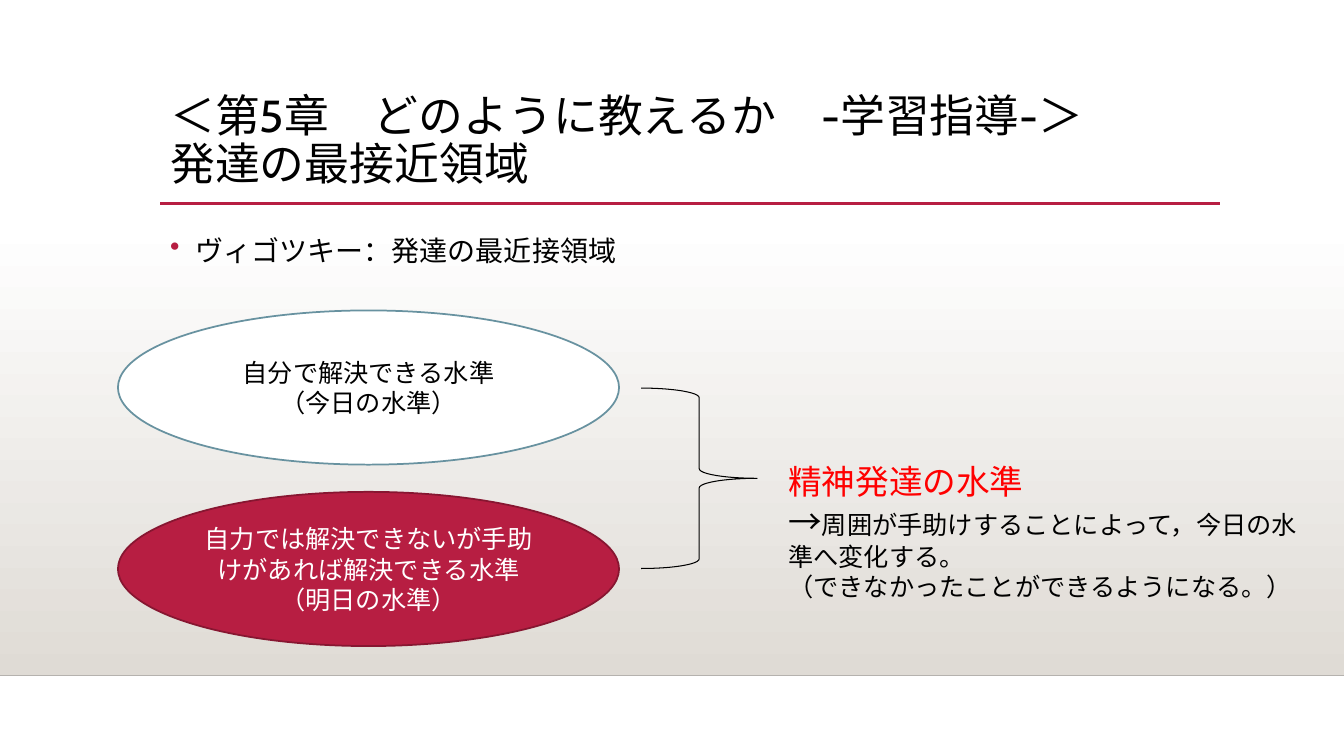
from lxml import etree
from pptx import Presentation
from pptx.dml.color import RGBColor
from pptx.enum import shapes, text
from pptx.oxml import ns
from pptx.util import Inches, Pt

FONT = "Cabin"
BLACK = RGBColor(0x00, 0x00, 0x00)
WHITE = RGBColor(0xFF, 0xFF, 0xFF)
RED = RGBColor(0xFF, 0x00, 0x00)
CRIMSON = RGBColor(0xB7, 0x1E, 0x42)
DARK_CRIMSON = RGBColor(0x87, 0x16, 0x31)
TEAL = RGBColor(0x68, 0x92, 0xA0)
SAND = RGBColor(0xDF, 0xDB, 0xD5)
FLOOR_GREY = RGBColor(0xB5, 0xB2, 0xAE)


def add_element(parent, tag, **attributes):
    """Append a drawing element to a parent and return it."""
    return etree.SubElement(parent, ns.qn(tag), attributes)


def write(frame, paragraphs, **layout):
    """Fill a text frame with paragraphs made of (words, size, colour) spans."""
    frame.word_wrap = True
    for index, spans in enumerate(paragraphs):
        para = frame.paragraphs[0] if index == 0 else frame.add_paragraph()
        for name, value in layout.items():
            setattr(para, name, value)
        for words, size, color in spans:
            for number, line in enumerate(words.split("\n")):
                if number:
                    para.add_line_break()
                span = para.add_run()
                span.text = line
                for name, value in {"name": FONT, "size": Pt(size)}.items():
                    setattr(span.font, name, value)
                span.font.color.rgb = color


def add_text(page, place, paragraphs, **layout):
    """Add a top-anchored text box and return its frame."""
    frame = page.shapes.add_textbox(*map(Inches, place)).text_frame
    frame.vertical_anchor = text.MSO_ANCHOR.TOP
    write(frame, paragraphs, **layout)
    return frame


def add_bullet(para, color):
    """Give a paragraph a hanging coloured bullet."""
    properties = para._p.get_or_add_pPr()
    properties.set("marL", str(Inches(0.25)))
    properties.set("indent", str(Inches(-0.25)))
    tint = add_element(properties, "a:buClr")
    add_element(tint, "a:srgbClr", val=str(color))
    add_element(properties, "a:buChar", char="•")


def add_rule(page, left, right, top, color, width):
    """Draw a horizontal line without a shadow."""
    rule = page.shapes.add_connector(
        shapes.MSO_CONNECTOR.STRAIGHT, *map(Inches, (left, top, right, top)))
    rule.line.color.rgb = color
    rule.line.width = Pt(width)
    add_element(rule._element.spPr, "a:effectLst")


def add_figure(page, kind, place, line=None, width=1.25, fill=None):
    """Add a preset shape with an optional outline and fill."""
    figure = page.shapes.add_shape(kind, *map(Inches, place))
    figure.shadow.inherit = False
    if fill is None:
        figure.fill.background()
    else:
        figure.fill.solid()
        figure.fill.fore_color.rgb = fill
    if line is None:
        figure.line.fill.background()
    else:
        figure.line.color.rgb = line
        figure.line.width = Pt(width)
    return figure


def add_backdrop(page):
    """Shade the wall from white down to sand above the floor line."""
    wall = add_figure(page, shapes.MSO_SHAPE.RECTANGLE, (0, 2.21, 13.33, 4.49))
    wall.fill.gradient()
    wall.fill.gradient_angle = 270
    for stop, color in zip(wall.fill.gradient_stops, (WHITE, SAND)):
        stop.color.rgb = color
    add_rule(page, 0, 13.33, 6.7, FLOOR_GREY, 1)
    add_rule(page, 1.59, 12.1, 2.02, CRIMSON, 2.5)


def add_level(page, top, lines, fill, line, color):
    """Add one ellipse naming a level of development."""
    level = add_figure(page, shapes.MSO_SHAPE.OVAL, (1.17, top, 4.97, 1.53),
                       line, fill=fill)
    level.text_frame.vertical_anchor = text.MSO_ANCHOR.MIDDLE
    write(level.text_frame, [[(words, 18, color)] for words in lines],
          alignment=text.PP_ALIGN.CENTER)


def main():
    """Build the slide on the zone of proximal development."""
    deck = Presentation()
    deck.slide_width, deck.slide_height = Inches(13.33), Inches(7.5)
    page = deck.slides.add_slide(deck.slide_layouts[6])
    add_backdrop(page)

    title = "＜第5章　どのように教えるか　-学習指導-＞\n発達の最接近領域"
    add_text(page, (1.59, 0.88, 10.5, 1.15), [[(title, 32, BLACK)]],
             line_spacing=0.9)
    topic = add_text(page, (1.59, 2.2, 10.5, 3.77),
                     [[("ヴィゴツキー：発達の最近接領域", 20, BLACK)]],
                     line_spacing=1.2)
    add_bullet(topic.paragraphs[0], CRIMSON)

    add_level(page, 3.08, ["自分で解決できる水準", "（今日の水準）"],
              WHITE, TEAL, BLACK)
    add_level(page, 4.88,
              ["自力では解決できないが手助けがあれば解決できる水準",
               "（明日の水準）"],
              CRIMSON, DARK_CRIMSON, WHITE)
    add_figure(page, shapes.MSO_SHAPE.RIGHT_BRACE, (6.36, 3.85, 1.15, 1.79),
               BLACK, 0.75)
    add_text(page, (7.72, 4.52, 5.4, 1.51), [
        [("精神発達の水準", 24, RED)],
        [("→", 24, BLACK),
         ("周囲が手助けすることによって，今日の水準へ変化する。", 18, BLACK)],
        [("（できなかったことができるようになる。）", 18, BLACK)],
    ])
    deck.save("out.pptx")


if __name__ == "__main__":
    main()
